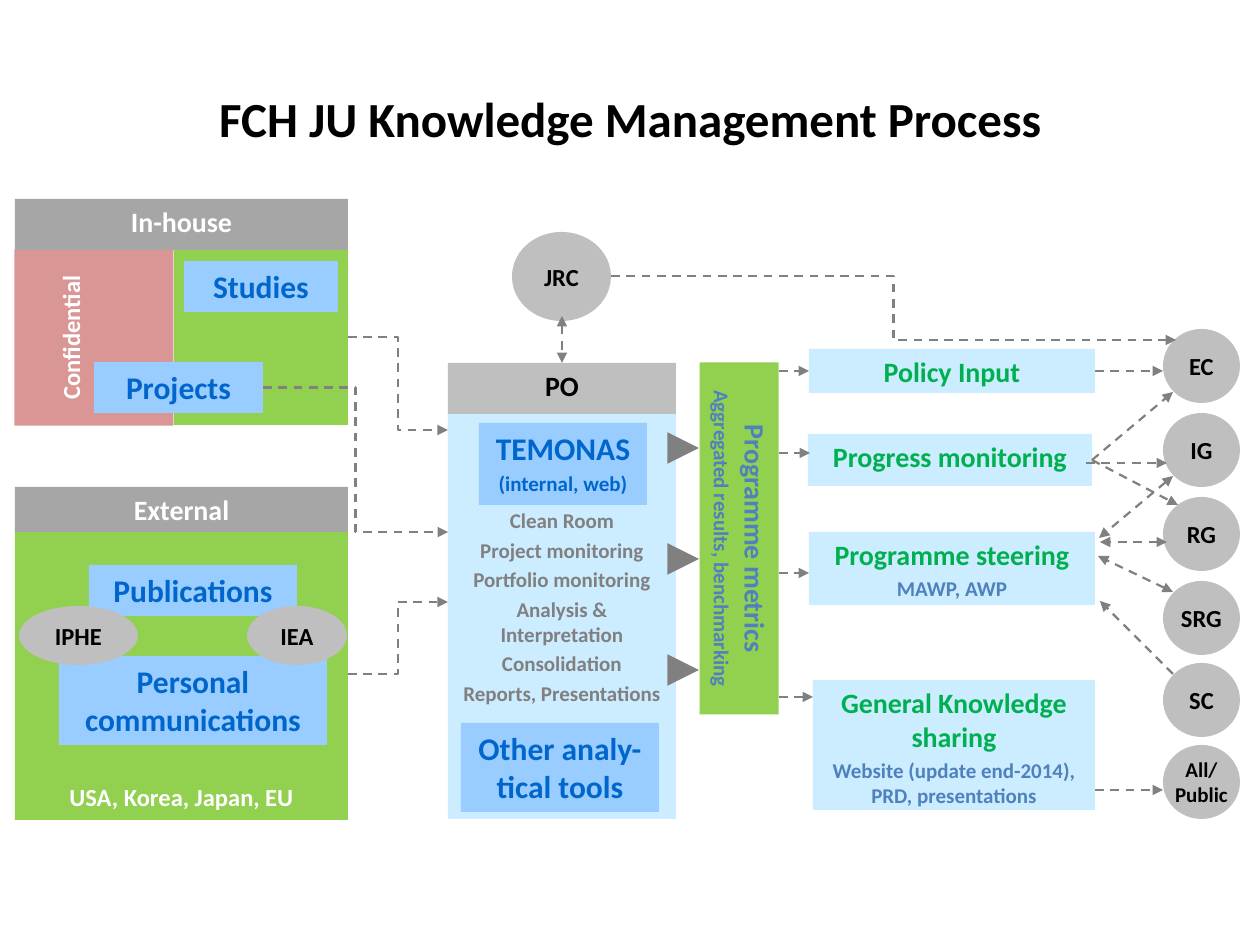
from dataclasses import dataclass
from typing import Optional

from lxml.etree import SubElement
from pptx import Presentation
from pptx.dml.color import RGBColor
from pptx.enum.dml import MSO_LINE
from pptx.enum.shapes import MSO_CONNECTOR, MSO_SHAPE
from pptx.enum.text import MSO_ANCHOR, PP_ALIGN
from pptx.oxml.ns import qn
from pptx.util import Emu, Pt

PX = 914400 / 126
FONT = "Calibri"
BLACK = RGBColor(0x00, 0x00, 0x00)
WHITE = RGBColor(0xFF, 0xFF, 0xFF)
GREEN = RGBColor(0x92, 0xD0, 0x50)
ROSE = RGBColor(0xD9, 0x96, 0x94)
HEADER_GRAY = RGBColor(0xA6, 0xA6, 0xA6)
LIGHT_GRAY = RGBColor(0xBF, 0xBF, 0xBF)
GRAY = RGBColor(0x80, 0x80, 0x80)
SKY = RGBColor(0x99, 0xCC, 0xFF)
PALE = RGBColor(0xCC, 0xEC, 0xFF)
BLUE = RGBColor(0x00, 0x66, 0xCC)
STEEL = RGBColor(0x4F, 0x81, 0xBD)
LEAF = RGBColor(0x00, 0xB0, 0x50)


@dataclass
class Line:
    text: str
    size: int
    color: RGBColor


@dataclass
class Box:
    name: str
    left: int
    top: int
    width: int
    height: int
    fill: RGBColor
    lines: tuple = ()
    rotation: int = 0
    top_inset: int = 6
    bottom_inset: int = 6
    anchor: MSO_ANCHOR = MSO_ANCHOR.TOP


@dataclass
class Circle:
    text: str
    left: int
    top: int
    width: int = 77
    height: int = 74
    size: int = 14


@dataclass
class Arrow:
    start: tuple
    end: tuple
    bent: bool = False
    double: bool = False
    width: float = 1.25
    source: Optional[tuple] = None
    target: Optional[tuple] = None


def px(value: float) -> Emu:
    return Emu(round(value * PX))


def write_lines(text_frame, lines) -> None:
    text_frame.word_wrap = True
    text_frame.text = "\n".join(line.text for line in lines)
    for index, (paragraph, line) in enumerate(zip(text_frame.paragraphs, lines)):
        paragraph.alignment = PP_ALIGN.CENTER
        if index:
            paragraph.space_before = Pt(line.size * 0.2)
        for span in paragraph.runs:
            span.font.name = FONT
            span.font.size = Pt(line.size)
            span.font.bold = True
            span.font.color.rgb = line.color


def add_filled(page, kind, item, fill):
    shape = page.shapes.add_shape(
        kind, px(item.left), px(item.top), px(item.width), px(item.height))
    shape.shadow.inherit = False
    shape.fill.solid()
    shape.fill.fore_color.rgb = fill
    shape.line.fill.background()
    return shape


def draw_box(page, box: Box):
    shape = add_filled(page, MSO_SHAPE.RECTANGLE, box, box.fill)
    shape.rotation = box.rotation
    frame = shape.text_frame
    frame.vertical_anchor = box.anchor
    frame.margin_top = px(box.top_inset)
    frame.margin_bottom = px(box.bottom_inset)
    write_lines(frame, box.lines)
    return shape


def draw_circle(page, circle: Circle) -> None:
    shape = add_filled(page, MSO_SHAPE.OVAL, circle, LIGHT_GRAY)
    frame = shape.text_frame
    frame.margin_left = frame.margin_right = frame.margin_top = frame.margin_bottom = 0
    frame.vertical_anchor = MSO_ANCHOR.MIDDLE
    write_lines(frame, [Line(circle.text, circle.size, BLACK)])


def draw_arrow(page, arrow: Arrow, shapes: dict) -> None:
    kind = MSO_CONNECTOR.ELBOW if arrow.bent else MSO_CONNECTOR.STRAIGHT
    points = [px(value) for value in arrow.start + arrow.end]
    connector = page.shapes.add_connector(kind, *points)
    if arrow.source:
        connector.begin_connect(shapes[arrow.source[0]], arrow.source[1])
    if arrow.target:
        connector.end_connect(shapes[arrow.target[0]], arrow.target[1])
    connector.line.color.rgb = GRAY
    connector.line.width = Pt(arrow.width)
    connector.line.dash_style = MSO_LINE.DASH
    properties = connector._element.spPr
    outline = properties.find(qn("a:ln"))
    if arrow.double:
        SubElement(outline, qn("a:headEnd"), type="triangle")
    SubElement(outline, qn("a:tailEnd"), type="triangle")
    SubElement(properties, qn("a:effectLst"))


def heading(text: str, color: RGBColor = WHITE) -> tuple:
    return (Line(text, 16, color),)


def source_label(text: str, *details: str) -> tuple:
    return (Line(text, 18, BLUE), *(Line(detail, 12, BLUE) for detail in details))


def output_label(text: str, *details: str) -> tuple:
    return (Line(text, 16, LEAF), *(Line(detail, 12, STEEL) for detail in details))


TASKS = ("Clean Room", "Project monitoring", "Portfolio monitoring",
         "Analysis & Interpretation", "Consolidation", "Reports, Presentations")

BOXES = [
    Box("title", 0, 0, 1260, 945, WHITE,
        (Line("FCH JU Knowledge Management Process", 28, BLACK),), top_inset=89),
    Box("office", 448, 413, 228, 406, PALE,
        tuple(Line(task, 12, GRAY) for task in TASKS), top_inset=95),
    Box("open", 174, 249, 174, 176, GREEN),
    Box("confidential", 6, 258, 176, 159, ROSE, (Line("Confidential", 14, WHITE),),
        rotation=270, top_inset=41),
    Box("in-house", 15, 199, 333, 51, HEADER_GRAY, heading("In-house")),
    Box("projects", 94, 362, 169, 51, SKY, source_label("Projects")),
    Box("studies", 184, 261, 154, 51, SKY, source_label("Studies")),
    Box("monitoring tool", 479, 423, 168, 82, SKY,
        source_label("TEMONAS", "(internal, web)")),
    Box("other tools", 461, 723, 198, 89, SKY, source_label("Other analy-tical tools")),
    Box("external body", 15, 528, 333, 292, GREEN,
        (Line("USA, Korea, Japan, EU", 14, WHITE),),
        bottom_inset=9, anchor=MSO_ANCHOR.BOTTOM),
    Box("external", 15, 487, 333, 45, HEADER_GRAY, heading("External")),
    Box("publications", 89, 565, 208, 51, SKY, source_label("Publications")),
    Box("communications", 59, 656, 268, 89, SKY, source_label("Personal communications")),
    Box("office header", 448, 363, 228, 51, LIGHT_GRAY, heading("PO", BLACK)),
    Box("policy", 809, 349, 286, 44, PALE, output_label("Policy Input")),
    Box("progress", 808, 434, 284, 52, PALE, output_label("Progress monitoring")),
    Box("steering", 809, 532, 286, 73, PALE,
        output_label("Programme steering", "MAWP, AWP")),
    Box("sharing", 813, 680, 282, 130, PALE,
        output_label("General Knowledge sharing",
                     "Website (update end-2014), PRD, presentations")),
    Box("metrics", 563, 499, 352, 79, GREEN,
        (Line("Programme metrics", 16, STEEL),
         Line("Aggregated results, benchmarking", 12, STEEL)), rotation=90),
]

RECIPIENTS = (("EC", 329), ("IG", 413), ("RG", 497), ("SRG", 581), ("SC", 663))
CIRCLES = [
    Circle("IPHE", 19, 606, 119, 59),
    Circle("IEA", 247, 606, 100, 59),
    Circle("JRC", 512, 232, 99, 89),
    *(Circle(name, 1163, top) for name, top in RECIPIENTS),
    Circle("All/ Public", 1163, 745, size=12),
]

ARROWS = [
    Arrow((263, 387), (448, 532), bent=True, source=("projects", 3)),
    Arrow((348, 337), (448, 430), bent=True, source=("open", 3)),
    Arrow((348, 674), (448, 602), bent=True, source=("external body", 3)),
    Arrow((611, 276), (1176, 340), bent=True),
    Arrow((562, 316), (562, 363), double=True, target=("office header", 0)),
    Arrow((779, 371), (809, 371), target=("policy", 1)),
    Arrow((779, 453), (810, 453)),
    Arrow((779, 573), (809, 573)),
    Arrow((779, 697), (813, 697)),
    Arrow((1095, 371), (1163, 371), source=("policy", 3)),
    Arrow((1092, 460), (1173, 392), source=("progress", 3)),
    Arrow((1086, 463), (1167, 463)),
    Arrow((1092, 460), (1178, 505), source=("progress", 3)),
    Arrow((1173, 476), (1099, 538), double=True),
    Arrow((1167, 542), (1100, 542), double=True),
    Arrow((1173, 592), (1098, 556), double=True),
    Arrow((1173, 674), (1100, 601)),
    Arrow((1095, 790), (1163, 790)),
    *(Arrow((674, 448 + 111 * row), (699, 448 + 111 * row), width=6) for row in range(3)),
]


def main() -> None:
    deck = Presentation()
    deck.slide_width, deck.slide_height = px(1260), px(945)
    page = deck.slides.add_slide(deck.slide_layouts[6])
    shapes = {box.name: draw_box(page, box) for box in BOXES}
    for circle in CIRCLES:
        draw_circle(page, circle)
    for arrow in ARROWS:
        draw_arrow(page, arrow, shapes)
    deck.save("out.pptx")


if __name__ == "__main__":
    main()
